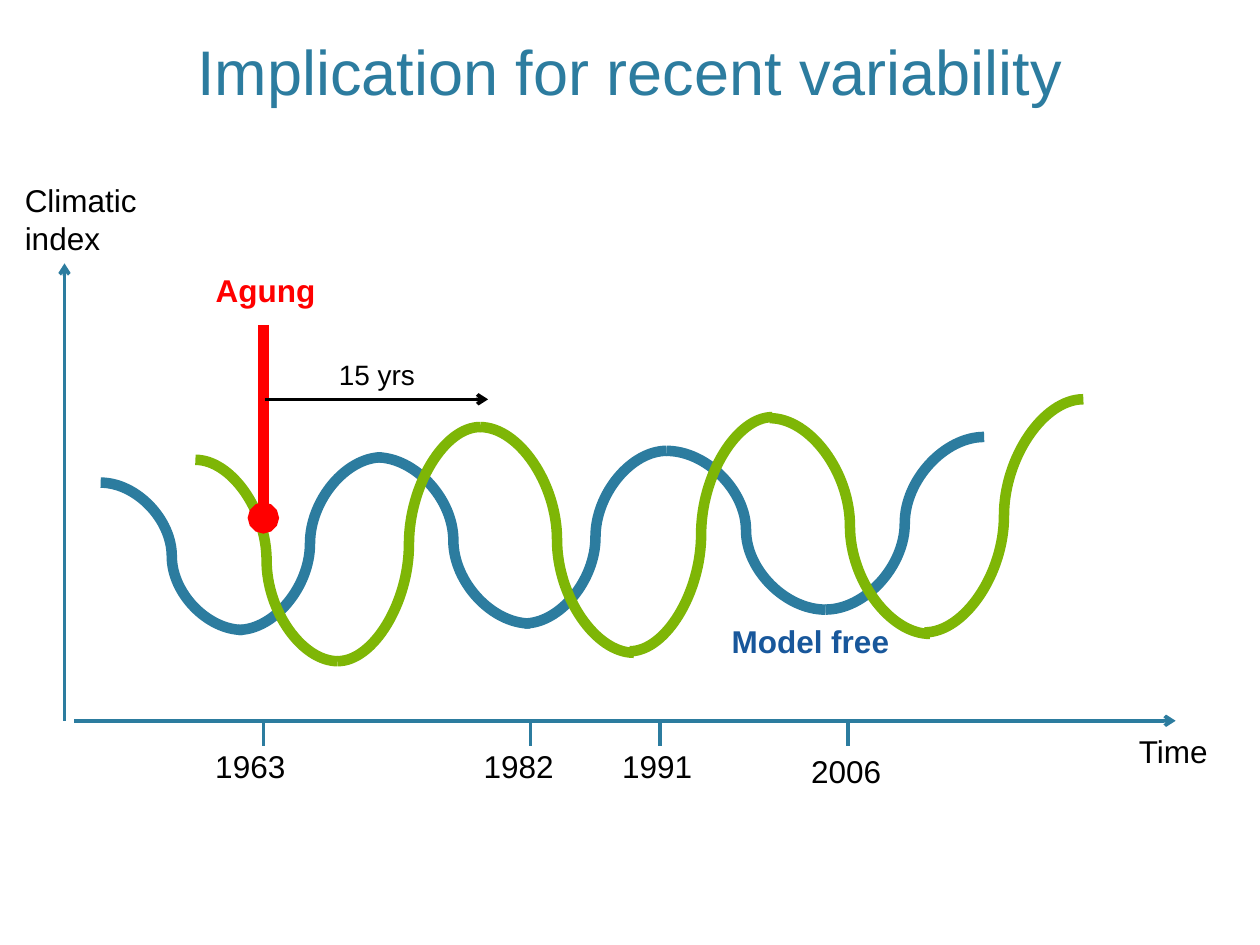
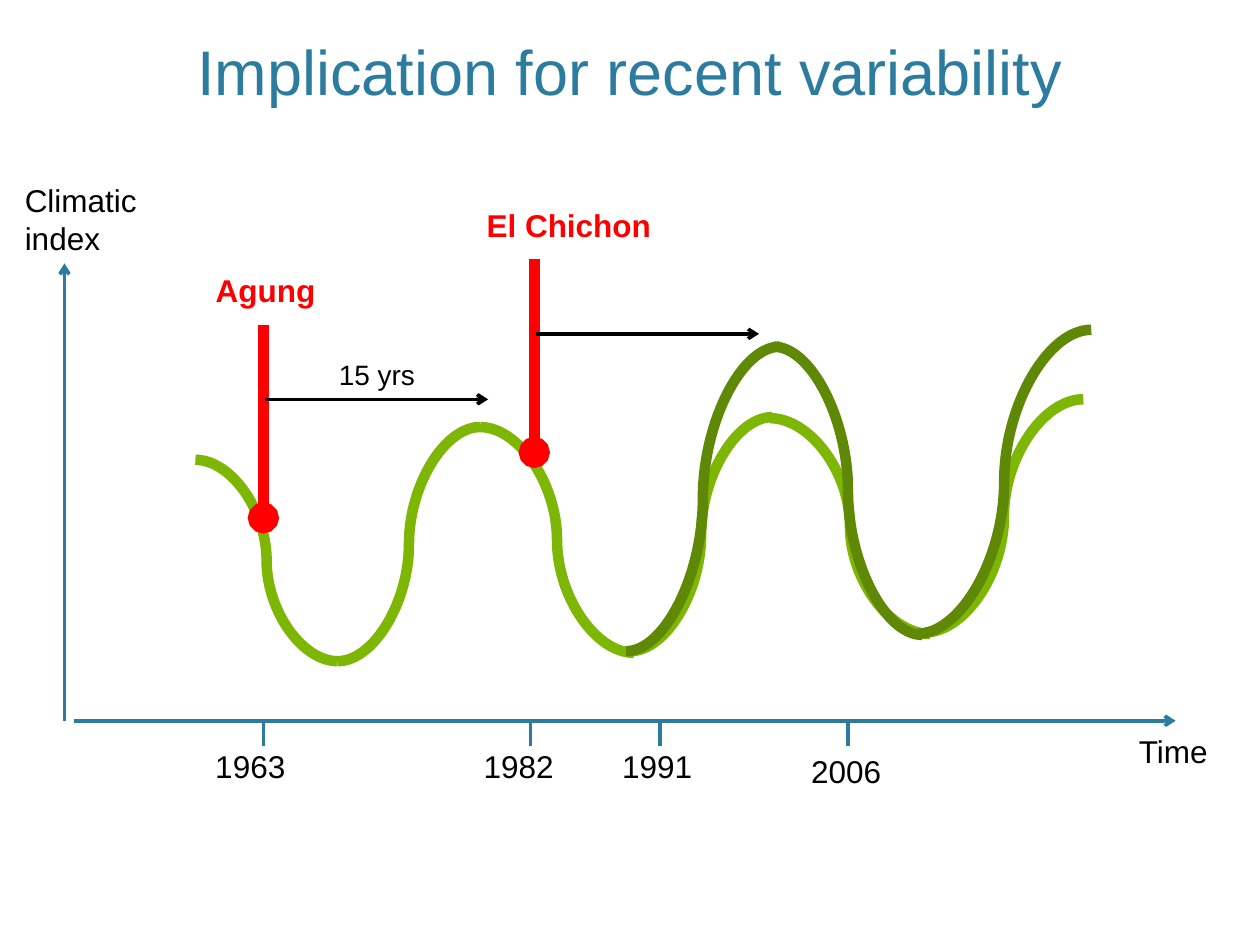
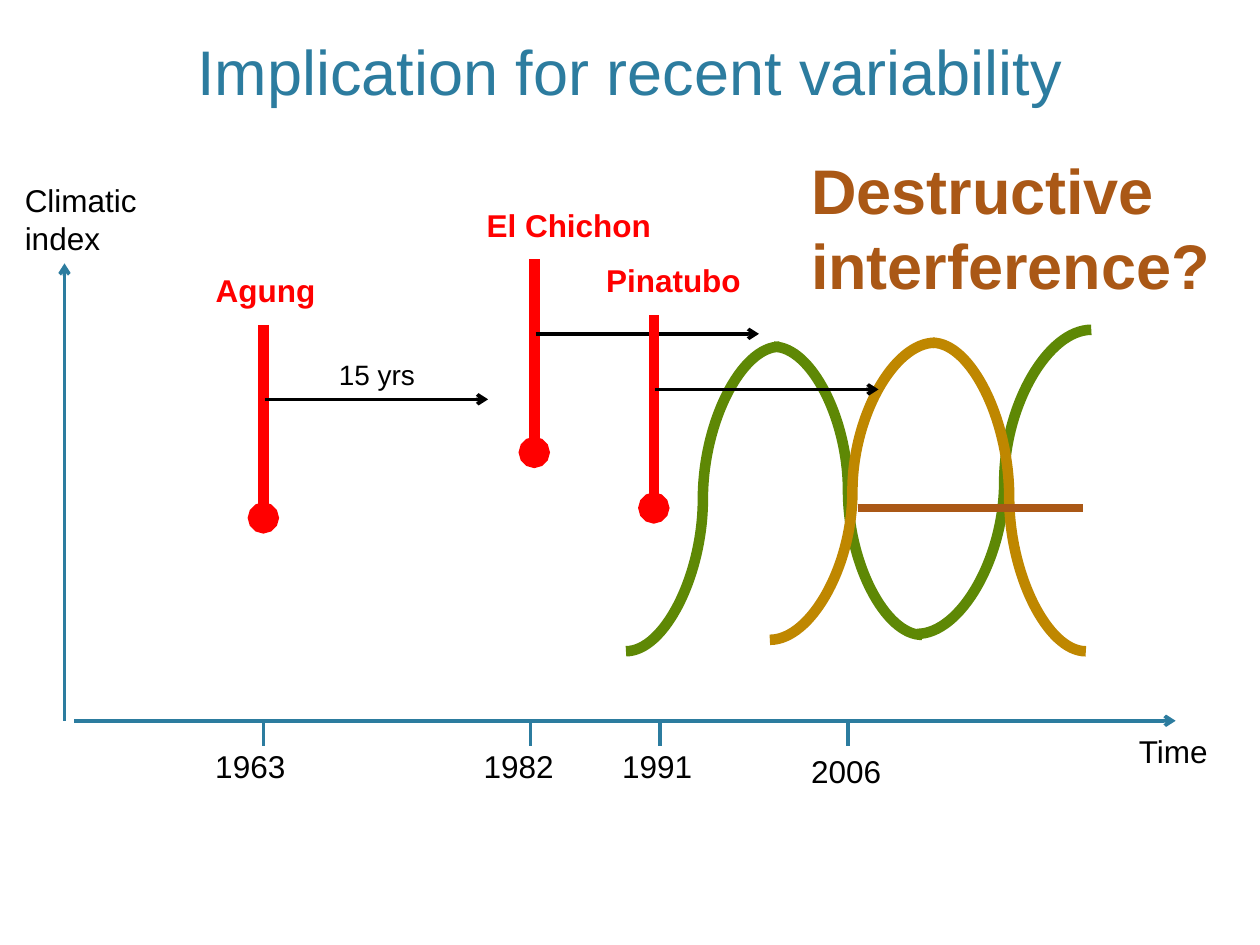
import pptx
import pptx.util
from lxml import etree
from pptx.dml.color import RGBColor
from pptx.enum.shapes import MSO_CONNECTOR, MSO_SHAPE
from pptx.enum.text import MSO_ANCHOR, MSO_AUTO_SIZE, PP_ALIGN
from pptx.oxml.ns import qn

Cm, Pt = pptx.util.Cm, pptx.util.Pt

FONT = "Arial"
COLORS = {
    "teal": "2C7C9F", "navy": "18579B", "green": "7EB606", "olive": "5E8805",
    "ochre": "BF8700", "brown": "AA5816", "red": "FF0000", "black": "000000",
    "white": "FFFFFF",
}

# Lengths below are in centimetres.
PAGE_WIDTH, PAGE_HEIGHT = 25.4, 19.05
TITLE = "Implication for recent variability"
AXIS_Y = 14.53
AXES = [((1.3, AXIS_Y), (1.3, 5.31)), ((1.5, AXIS_Y), (23.7, AXIS_Y))]
AXIS_LABELS = [("Climatic index", (0.25, 3.53, 3.99, 1.8)),
               ("Time", (22.71, 14.63, 3.99, 1.02))]
TICK_LENGTH = 0.51
YEARS = [  # year, tick x, label left, label top
    ("1963", 5.31, 4.09, 14.94), ("1982", 10.69, 9.5, 14.94),
    ("1991", 13.31, 12.29, 14.94), ("2006", 17.09, 16.1, 15.04),
]

ERUPTIONS = {  # top of the pole
    "Agung": (5.31, 6.55), "El Chichon": (10.77, 5.23), "Pinatubo": (13.18, 6.35),
}
POLE_LENGTH, DELAY_DROP, DELAY_LENGTH = 3.89, 1.5, 4.5

WAVES = {  # color and half-waves from one extreme to the next
    "free": ("teal", [
        ((2.03, 9.73), (4.9, 12.7)), ((4.8, 12.7), (7.7, 9.22)),
        ((7.59, 9.22), (10.69, 12.57)), ((10.57, 12.57), (13.44, 9.09)),
        ((13.44, 9.09), (16.64, 12.29)), ((16.64, 12.29), (19.84, 8.81))]),
    "Agung": ("green", [
        ((3.94, 9.27), (6.81, 13.33)), ((6.81, 13.33), (9.68, 8.61)),
        ((9.68, 8.61), (12.78, 13.16)), ((12.7, 13.13), (15.57, 8.41)),
        ((15.52, 8.43), (18.75, 12.78)), ((18.64, 12.75), (21.84, 8.05))]),
    "El Chichon": ("olive", [
        ((12.62, 13.13), (15.72, 6.99)), ((15.6, 6.99), (18.59, 12.8)),
        ((18.49, 12.78), (22, 6.65))]),
    "Pinatubo": ("ochre", [
        ((15.52, 12.9), (18.85, 6.91)), ((18.8, 6.91), (21.89, 13.13))]),
}

SLIDES = [
    {"waves": ["free", "Agung"], "eruptions": ["Agung"], "model_label": True},
    {"waves": ["Agung", "El Chichon"], "eruptions": ["Agung", "El Chichon"]},
    {"waves": ["El Chichon", "Pinatubo"],
     "eruptions": ["Agung", "El Chichon", "Pinatubo"], "interference": True},
]


def rgb(color):
    return RGBColor.from_string(COLORS[color])


def write(shape, text, color="black", size=18, bold=False, align=PP_ALIGN.LEFT,
          anchor=MSO_ANCHOR.TOP, fit=MSO_AUTO_SIZE.SHAPE_TO_FIT_TEXT):
    frame = shape.text_frame
    frame_format = {"word_wrap": True, "vertical_anchor": anchor, "auto_size": fit}
    for name, value in frame_format.items():
        setattr(frame, name, value)
    para = frame.paragraphs[0]
    para.alignment = align
    span = para.add_run()
    span.text = text
    for name, value in {"name": FONT, "size": Pt(size), "bold": bold}.items():
        setattr(span.font, name, value)
    span.font.color.rgb = rgb(color)


def add_text(page, text, place, **text_format):
    write(page.shapes.add_textbox(*map(Cm, place)), text, **text_format)


def add_line(page, start, end, color, width=2, tip=None, kind=MSO_CONNECTOR.STRAIGHT):
    """Draw a connector; tip names the ending at its far end."""
    line = page.shapes.add_connector(kind, *map(Cm, start + end))
    line.line.color.rgb = rgb(color)
    line.line.width = Pt(width)
    if tip:
        etree.SubElement(line.line._get_or_add_ln(), qn("a:tailEnd"), type=tip)
    etree.SubElement(line._element.spPr, qn("a:effectLst"))


def add_wave(page, name):
    color, halves = WAVES[name]
    for start, end in halves:
        add_line(page, start, end, color, 6, kind=MSO_CONNECTOR.CURVE)


def add_time_frame(page):
    """Draw the title, both axes and the marked years."""
    add_text(page, TITLE, (0, -0.28, PAGE_WIDTH, 2.59), color="teal", size=36,
             align=PP_ALIGN.CENTER, anchor=MSO_ANCHOR.BOTTOM, fit=MSO_AUTO_SIZE.NONE)
    for start, end in AXES:
        add_line(page, start, end, "teal", tip="arrow")
    for label, place in AXIS_LABELS:
        add_text(page, label, place)
    for year, x, left, top in YEARS:
        add_line(page, (x, AXIS_Y), (x, AXIS_Y + TICK_LENGTH), "teal")
        add_text(page, year, (left, top, 3.4, 1.02))


def add_eruption(page, name):
    """Draw the named pole and the arrow for the delay that follows it."""
    x, top = ERUPTIONS[name]
    add_text(page, name, (x - 1.21, top - 1.21, 4.39, 1.02), color="red", bold=True)
    add_line(page, (x, top), (x, top + POLE_LENGTH), "red", 6, "oval")
    delay_y = top + DELAY_DROP
    add_line(page, (x + 0.03, delay_y), (x + 0.03 + DELAY_LENGTH, delay_y),
             "black", tip="arrow")
    if name == "Agung":
        add_text(page, "15 yrs", (x + 1.27, top + 0.53, 2.21, 0.94), size=16)


def add_interference(page):
    add_line(page, (17.3, 10.24), (21.84, 10.24), "brown", 4.5)
    banner = page.shapes.add_shape(MSO_SHAPE.RECTANGLE,
                                   *map(Cm, (16.1, 2.92, 9.3, 3.33)))
    banner.shadow.inherit = False
    banner.fill.solid()
    banner.fill.fore_color.rgb = rgb("white")
    banner.line.fill.background()
    write(banner, "Destructive interference?", color="brown", size=36, bold=True)


def main():
    deck = pptx.Presentation()
    deck.slide_width, deck.slide_height = Cm(PAGE_WIDTH), Cm(PAGE_HEIGHT)
    for content in SLIDES:
        page = deck.slides.add_slide(deck.slide_layouts[6])
        add_time_frame(page)
        for name in content["waves"]:
            add_wave(page, name)
        if content.get("model_label"):
            add_text(page, "Model free", (14.5, 12.42, 5.33, 0.81),
                     color="navy", bold=True)
        if content.get("interference"):
            add_interference(page)
        for name in content["eruptions"]:
            add_eruption(page, name)
    deck.save("out.pptx")


if __name__ == "__main__":
    main()
